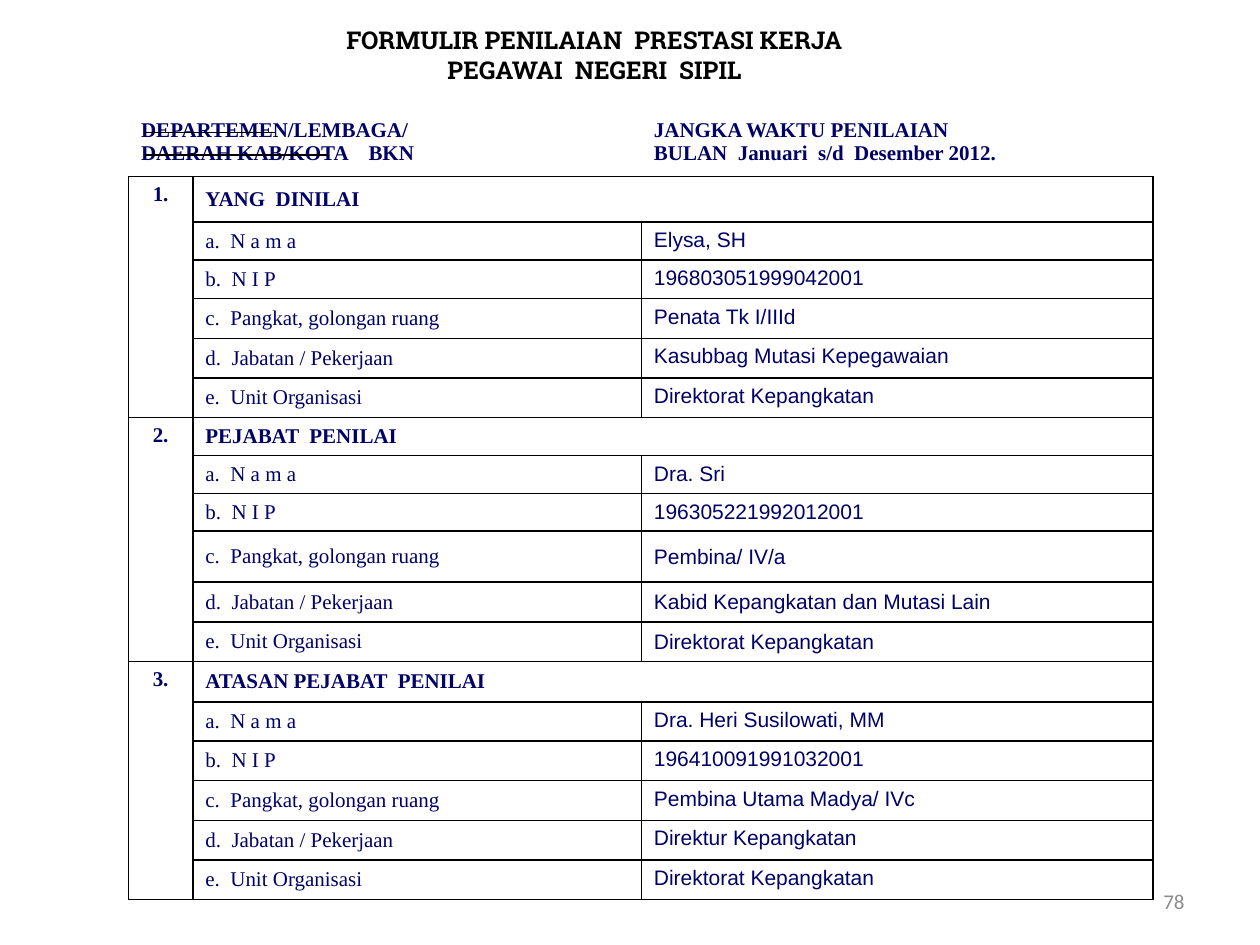
import pptx
import pptx.util
import pptx.dml.color
import pptx.enum.text
import pptx.enum.shapes
import pptx.oxml
import pptx.oxml.ns

PP = pptx.enum.text.PP_ALIGN
MSO = pptx.enum.text.MSO_ANCHOR
NAVY, BLACK, GREY = "000066", "000000", "8C8C8C"
SERIF, SANS = "Times New Roman", "Arial"

prs = pptx.Presentation()
prs.slide_width = pptx.util.Inches(10)
prs.slide_height = pptx.util.Inches(7.5)
W, H = prs.slide_width / 100, prs.slide_height / 100
s = prs.slides.add_slide(prs.slide_layouts[5])


def write(tf, text, font, size, color, bold=False, align=PP.LEFT, anchor=MSO.MIDDLE):
    tf.text = text
    tf.word_wrap = True
    tf.vertical_anchor = anchor
    for p in tf.paragraphs:
        p.alignment = align
        for r in p.runs:
            r.font.name = font
            r.font.size = pptx.util.Pt(size)
            r.font.bold = bold
            r.font.color.rgb = pptx.dml.color.RGBColor.from_string(color)


def set_borders(cell, sides):
    tcPr = cell._tc.get_or_add_tcPr()
    for i, side in enumerate(sides):
        ln = pptx.oxml.parse_xml(
            f'<a:{side} {pptx.oxml.ns.nsdecls("a")} w="12700"><a:solidFill>'
            f'<a:srgbClr val="{BLACK}"/></a:solidFill></a:{side}>')
        tcPr.insert(i, ln)


title = s.shapes.title
title.left, title.top = int(19.6 * W), int(2 * H)
title.width, title.height = int(55.2 * W), int(7.6 * H)
write(title.text_frame, "FORMULIR PENILAIAN  PRESTASI KERJA\nPEGAWAI  NEGERI  SIPIL",
      "Roboto Slab", 14, BLACK, True, PP.CENTER)

number = s.shapes.add_textbox(int(71.7 * W), int(92.7 * H), int(23.3 * W), int(5.3 * H))
write(number.text_frame, "78", "Calibri", 12, GREY, align=PP.RIGHT)

labels = ["a.  N a m a", "b.  N I P", "c.  Pangkat, golongan ruang",
          "d.  Jabatan / Pekerjaan", "e.  Unit Organisasi"]
sections = [
    ("YANG  DINILAI", MSO.TOP,
     ["Elysa, SH", "196803051999042001", "Penata Tk I/IIId",
      "Kasubbag Mutasi Kepegawaian", "Direktorat Kepangkatan"]),
    ("PEJABAT  PENILAI", MSO.MIDDLE,
     ["Dra. Sri", "196305221992012001", "Pembina/ IV/a",
      "Kabid Kepangkatan dan Mutasi Lain", "Direktorat Kepangkatan"]),
    ("ATASAN PEJABAT  PENILAI", MSO.TOP,
     ["Dra. Heri Susilowati, MM", "196410091991032001", "Pembina Utama Madya/ IVc",
      "Direktur Kepangkatan", "Direktorat Kepangkatan"]),
]
col_shares = [5.1, 35.6, 40.6]
row_shares = [6.8, 4.8, 4, 4.1, 4.2, 4.2, 4.2, 4, 4, 4, 5.4,
              4.2, 4.2, 4.3, 4.1, 4.2, 4.2, 4.2, 4.2]
tbl = s.shapes.add_table(len(row_shares), len(col_shares), int(10.2 * W), int(11.9 * H),
                         int(sum(col_shares) * W), int(sum(row_shares) * H)).table
tbl.first_row = tbl.horz_banding = False
for col, share in zip(tbl.columns, col_shares):
    col.width = int(share * W)
for row, share in zip(tbl.rows, row_shares):
    row.height = int(share * H)

for i, row in enumerate(tbl.rows):
    for cell in row.cells:
        cell.fill.background()
        set_borders(cell, ["lnL", "lnR", "lnT", "lnB"] if i else ["lnB"])

tbl.cell(0, 0).merge(tbl.cell(0, 1))
heads = {0: "DEPARTEMEN/LEMBAGA/\nDAERAH KAB/KOTA    BKN",
         2: "JANGKA WAKTU PENILAIAN\nBULAN  Januari  s/d  Desember 2012."}
for c, text in heads.items():
    write(tbl.cell(0, c).text_frame, text, SERIF, 12, NAVY, True)
    tbl.cell(0, c).vertical_anchor = MSO.TOP

for n, (heading, anchor, values) in enumerate(sections):
    top = 1 + n * (len(labels) + 1)
    tbl.cell(top, 0).merge(tbl.cell(top + len(labels), 0))
    tbl.cell(top, 1).merge(tbl.cell(top, 2))
    write(tbl.cell(top, 0).text_frame, f"{n + 1}.", SERIF, 12, NAVY, True, PP.CENTER)
    write(tbl.cell(top, 1).text_frame, heading, SERIF, 12, NAVY, True)
    tbl.cell(top, 0).vertical_anchor = MSO.TOP
    tbl.cell(top, 1).vertical_anchor = MSO.MIDDLE
    for i, (label, value) in enumerate(zip(labels, values), top + 1):
        write(tbl.cell(i, 1).text_frame, label, SERIF, 12, NAVY)
        write(tbl.cell(i, 2).text_frame, value, SANS, 12, NAVY)
        tbl.cell(i, 1).vertical_anchor = MSO.MIDDLE
        tbl.cell(i, 2).vertical_anchor = anchor

for right, y in [(21.8, 14), (26, 16.4)]:
    line = s.shapes.add_connector(pptx.enum.shapes.MSO_CONNECTOR.STRAIGHT,
                                  int(right * W), int(y * H), int(11.5 * W), int(y * H))
    line.line.width = pptx.util.Pt(0.75)
    line.line.color.rgb = pptx.dml.color.RGBColor.from_string(BLACK)
    line._element.spPr.append(
        pptx.oxml.parse_xml(f'<a:effectLst {pptx.oxml.ns.nsdecls("a")}/>'))

prs.save("out.pptx")
